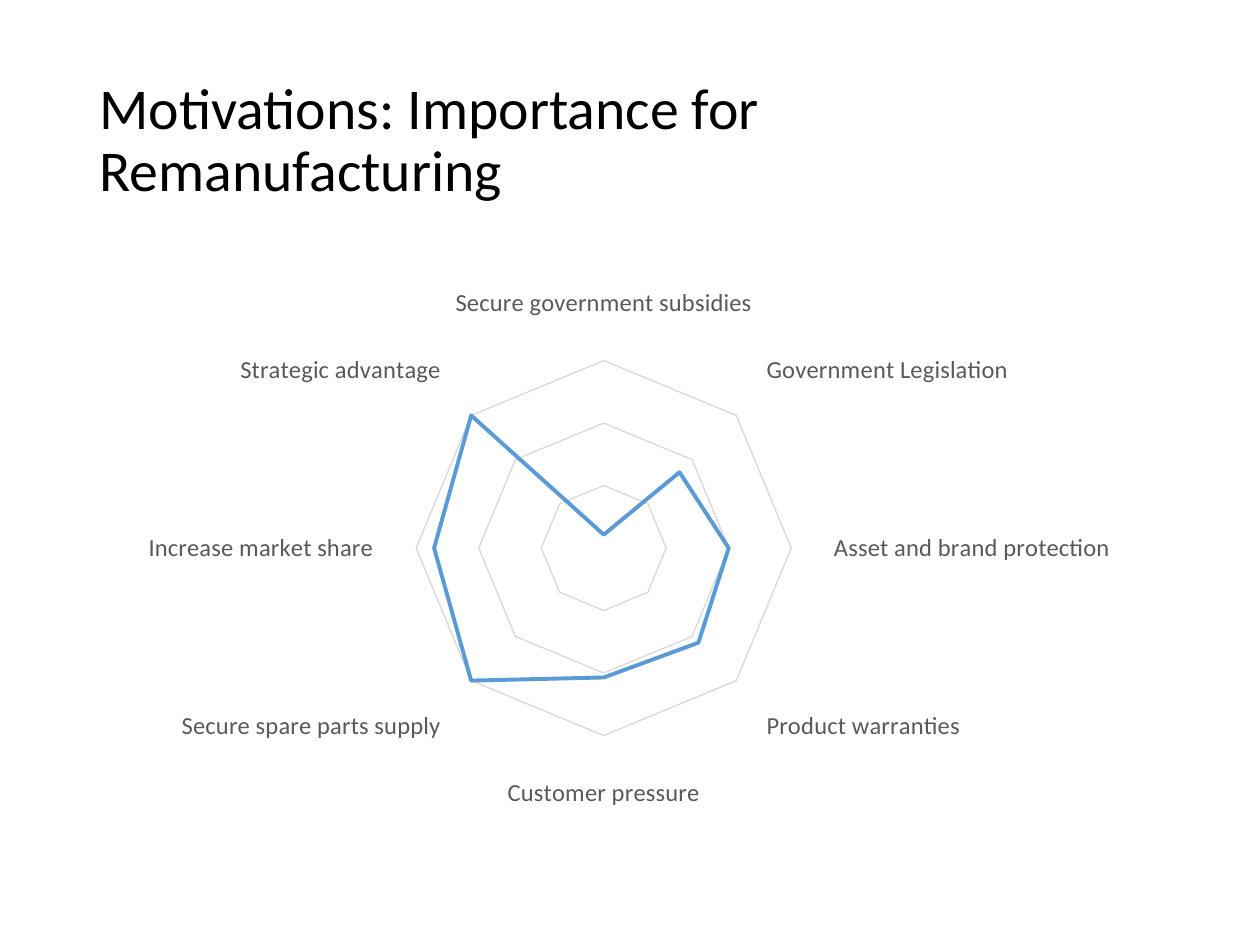
from pptx import Presentation
from pptx.chart.data import CategoryChartData
from pptx.dml.color import RGBColor
from pptx.enum.chart import XL_CHART_TYPE, XL_MARKER_STYLE, XL_TICK_MARK
from pptx.enum.text import MSO_ANCHOR, PP_ALIGN
from pptx.util import Inches, Pt

FONT = "Calibri"
COLORS = {"title": "000000", "label": "595959", "grid": "D9D9D9", "series": "5B9BD5"}
IMPORTANCE = {
    "Secure government subsidies": 61,
    "Government Legislation": 82,
    "Asset and brand protection": 86,
    "Product warranties": 88,
    "Customer pressure": 87,
    "Secure spare parts supply": 100,
    "Increase market share": 96,
    "Strategic advantage": 100,
}


def style_font(font, size, color):
    font.name = FONT
    font.size = Pt(size)
    font.color.rgb = RGBColor.from_string(COLORS[color])


def style_line(line, width, color):
    line.color.rgb = RGBColor.from_string(COLORS[color])
    line.width = Pt(width)


def place_title(slide, left, top, width, height):
    title = slide.shapes.title
    title.left, title.top, title.width, title.height = left, top, width, height
    text_frame = title.text_frame
    text_frame.text = "Motivations: Importance for Remanufacturing"
    text_frame.word_wrap = True
    text_frame.vertical_anchor = MSO_ANCHOR.MIDDLE
    paragraph = text_frame.paragraphs[0]
    paragraph.alignment = PP_ALIGN.LEFT
    paragraph.line_spacing = 0.9
    style_font(paragraph.runs[0].font, 33, "title")


def add_motivation_radar(slide, left, top, width, height):
    chart_data = CategoryChartData()
    chart_data.categories = list(IMPORTANCE)
    chart_data.add_series("Series 1", list(IMPORTANCE.values()))
    chart = slide.shapes.add_chart(
        XL_CHART_TYPE.RADAR, left, top, width, height, chart_data
    ).chart
    chart.has_title = False
    chart.has_legend = False
    style_font(chart.font, 10, "title")

    category_axis = chart.category_axis
    category_axis.has_major_gridlines = False
    category_axis.major_tick_mark = XL_TICK_MARK.NONE
    style_font(category_axis.tick_labels.font, 14, "label")
    style_line(category_axis.format.line, 0.75, "grid")

    value_axis = chart.value_axis
    value_axis.minimum_scale = 58
    value_axis.maximum_scale = 100
    value_axis.major_unit = 14
    value_axis.has_major_gridlines = True
    style_line(value_axis.major_gridlines.format.line, 0.75, "grid")
    value_axis.visible = False

    series = chart.plots[0].series[0]
    series.marker.style = XL_MARKER_STYLE.NONE
    style_line(series.format.line, 2.25, "series")


def main():
    presentation = Presentation()
    presentation.slide_width = Inches(10)
    presentation.slide_height = Inches(7.5)
    slide = presentation.slides.add_slide(presentation.slide_layouts[5])
    place_title(slide, Inches(0.69), Inches(0.4), Inches(8.72), Inches(1.45))
    add_motivation_radar(slide, Inches(1.02), Inches(1.7), Inches(7.95), Inches(5.3))
    presentation.save("out.pptx")


if __name__ == "__main__":
    main()
